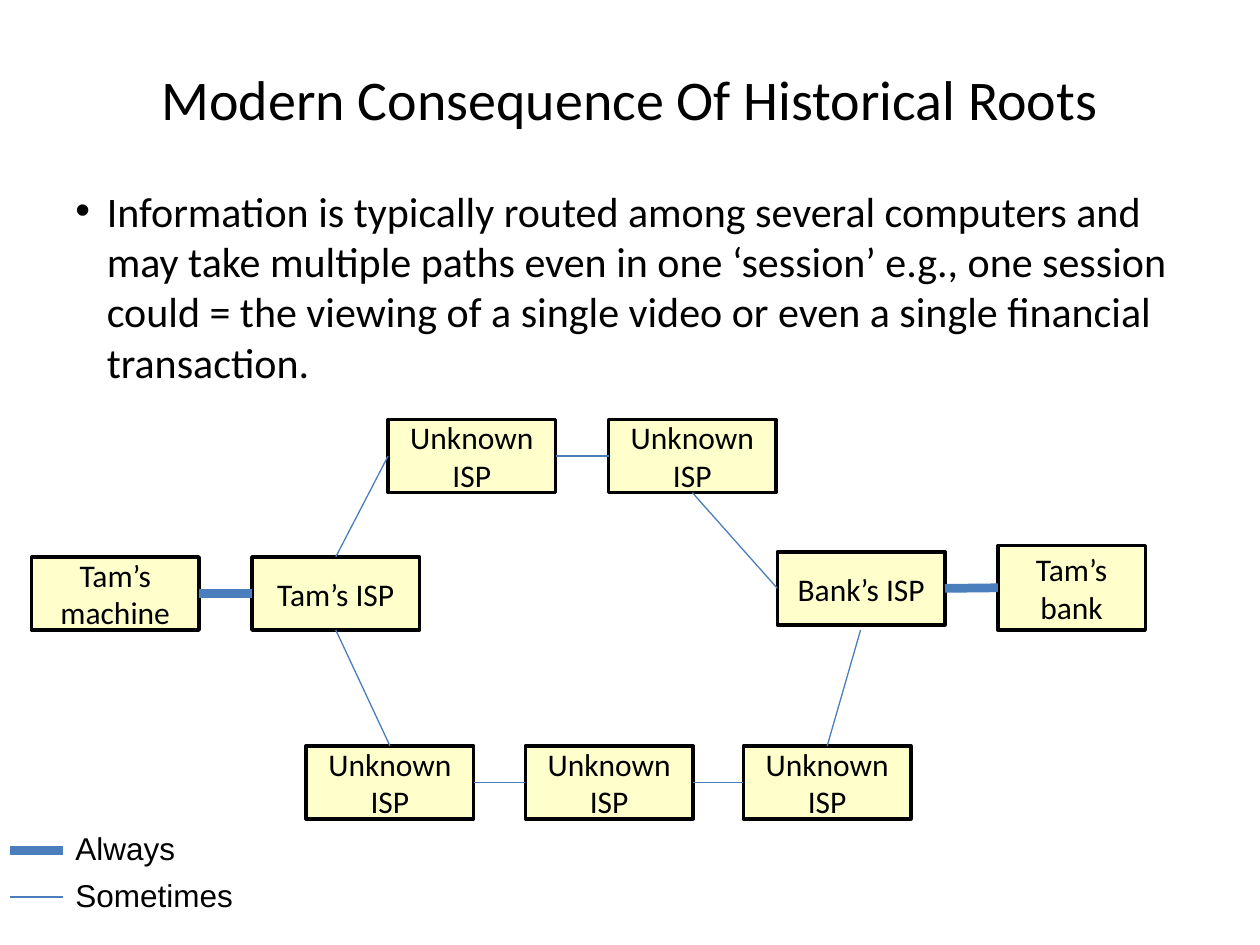
from lxml.etree import SubElement as Sub
from pptx import Presentation
from pptx.dml.color import RGBColor
from pptx.enum.shapes import MSO_CONNECTOR as Conn, MSO_SHAPE as Shape
from pptx.enum.text import MSO_ANCHOR as Anchor, PP_ALIGN as Align
from pptx.oxml.ns import qn
from pptx.util import Inches, Pt

BLACK = RGBColor(0x00, 0x00, 0x00)
CREAM = RGBColor(0xFF, 0xFF, 0xCC)
BLUE = RGBColor(0x4B, 0x7E, 0xBC)
TOP, LEFT, BOTTOM, RIGHT = range(4)
THICK, THIN = 5, 0.75
WIDE, HIGH = 1.33, 0.58


class Deck:
    def __init__(self):
        self.show = Presentation()
        self.show.slide_width = Inches(10)
        self.show.slide_height = Inches(7.5)
        self.slide = self.show.slides.add_slide(self.show.slide_layouts[5])
        self.shapes = self.slide.shapes

    def label(self, frame, text, size, face="Calibri", align=Align.LEFT):
        frame.word_wrap = True
        para = frame.paragraphs[0]
        para.text = text
        para.alignment = align
        para.font.size = Pt(size)
        para.font.name = face
        para.font.color.rgb = BLACK
        return para

    def title(self, text, x, y, w, h):
        shape = self.shapes.title
        shape.left, shape.top = Inches(x), Inches(y)
        shape.width, shape.height = Inches(w), Inches(h)
        shape.text_frame.vertical_anchor = Anchor.MIDDLE
        self.label(shape.text_frame, text, 32, align=Align.CENTER)

    def text(self, text, x, y, w, h, size=18, face="Arial"):
        box = self.shapes.add_textbox(Inches(x), Inches(y), Inches(w), Inches(h))
        return self.label(box.text_frame, text, size, face)

    def bullet(self, text, x, y, w, h):
        para = self.text(text, x, y, w, h, 24, "Calibri")
        para.space_before = Pt(4.8)
        props = para._p.get_or_add_pPr()
        props.set("marL", str(Inches(0.25)))
        props.set("indent", str(Inches(-0.25)))
        Sub(props, qn("a:buFont")).set("typeface", "Arial")
        Sub(props, qn("a:buChar")).set("char", "•")

    def node(self, text, x, y, w=WIDE, h=HIGH):
        box = self.shapes.add_shape(
            Shape.RECTANGLE, Inches(x), Inches(y), Inches(w), Inches(h))
        box.shadow.inherit = False
        box.fill.solid()
        box.fill.fore_color.rgb = CREAM
        box.line.color.rgb = BLACK
        box.line.width = Pt(2)
        box.text_frame.vertical_anchor = Anchor.MIDDLE
        self.label(box.text_frame, text, 18, align=Align.CENTER)
        return box

    def line(self, x1, y1, x2, y2, width):
        line = self.shapes.add_connector(
            Conn.STRAIGHT, Inches(x1), Inches(y1), Inches(x2), Inches(y2))
        line.line.color.rgb = BLUE
        line.line.width = Pt(width)
        Sub(line._element.spPr, qn("a:effectLst"))
        return line

    def link(self, start, out, end, into, width=THIN):
        line = self.line(0, 0, 1, 1, width)
        line.begin_connect(start, out)
        line.end_connect(end, into)


def main():
    deck = Deck()
    deck.title("Modern Consequence Of Historical Roots", 0.5, 0.3, 9, 0.95)
    deck.bullet(
        "Information is typically routed among several computers and may take "
        "multiple paths even in one ‘session’ e.g., one session could = the "
        "viewing of a single video or even a single financial transaction.",
        0.5, 1.42, 9, 2.2)

    home = deck.node("Tam’s machine", 0.25, 4.42)
    bank = deck.node("Tam’s bank", 7.92, 4.33, 1.17, 0.67)
    near = deck.node("Tam’s ISP", 2, 4.42)
    far = deck.node("Bank’s ISP", 6.17, 4.38)
    deck.link(home, RIGHT, near, LEFT, THICK)
    deck.link(far, RIGHT, bank, LEFT, THICK)

    upper = [deck.node("Unknown ISP", x, 3.33) for x in (3.08, 4.83)]
    lower = [deck.node("Unknown ISP", x, 5.92) for x in (2.43, 4.17, 5.9)]
    for row in (upper, lower):
        for start, end in zip(row, row[1:]):
            deck.link(start, RIGHT, end, LEFT)
    deck.link(near, TOP, upper[0], LEFT)
    deck.link(upper[-1], BOTTOM, far, LEFT)
    deck.link(near, BOTTOM, lower[0], TOP)
    deck.line(6.57, 5.92, 6.83, 5, THIN).begin_connect(lower[-1], TOP)

    for name, y, w, width in (("Always", 6.75, 1.08, THICK),
                              ("Sometimes", 7.12, 1.5, THIN)):
        deck.line(0.08, y, 0.5, y, width)
        deck.text(name, 0.5, y - 0.22, w, 0.4)

    deck.show.save("out.pptx")


if __name__ == "__main__":
    main()
